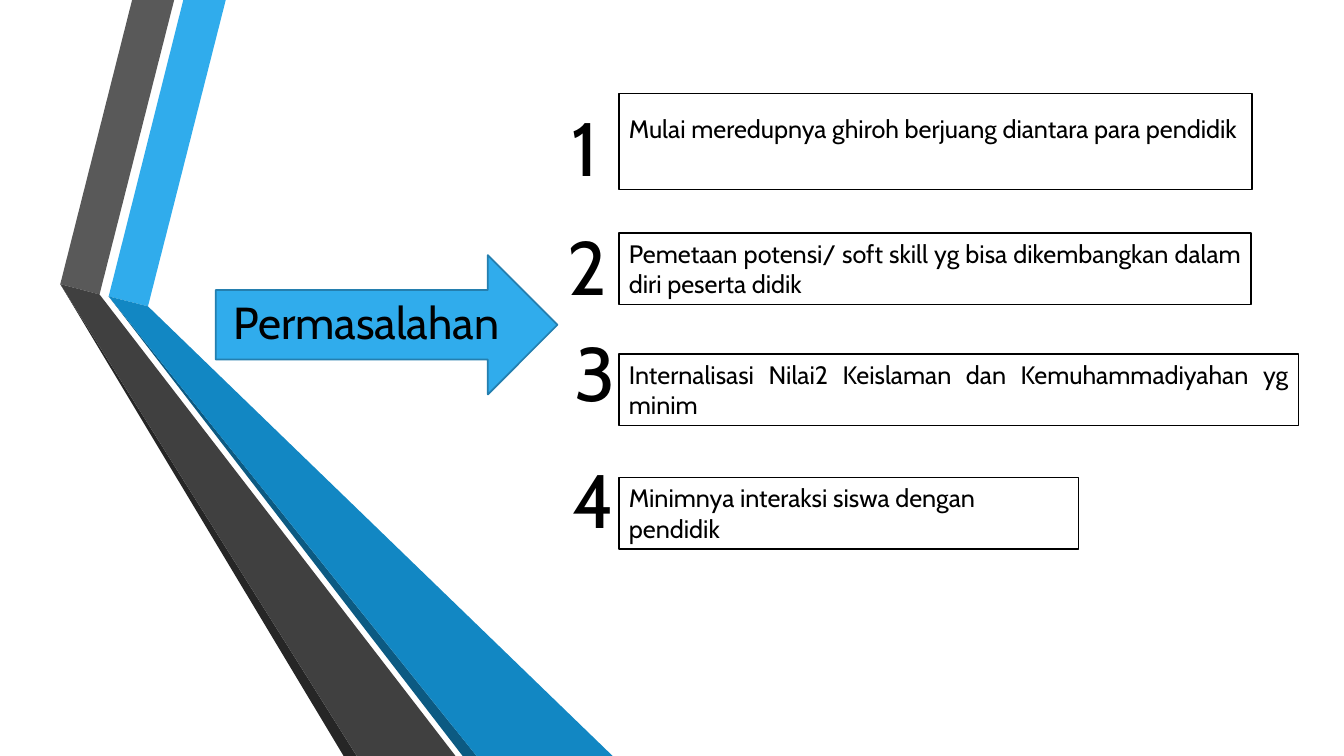
from dataclasses import dataclass

from pptx import Presentation
from pptx.dml.color import RGBColor
from pptx.enum.shapes import MSO_SHAPE
from pptx.enum.text import MSO_ANCHOR, PP_ALIGN
from pptx.util import Cm, Pt


@dataclass
class Theme:
    font: str = "Cabin"
    ink: str = "000000"
    sky: str = "30ACEC"
    rim: str = "247FAF"
    blue: str = "1287C3"
    navy: str = "0C5A82"
    grey: str = "595959"
    coal: str = "404040"
    night: str = "262626"
    body: int = 18
    title: int = 32
    digit: int = 54


class Board:
    def __init__(self, slide, theme):
        self.slide = slide
        self.theme = theme

    def paint(self, shape, fill=None, line=None, width=1):
        shape.shadow.inherit = False
        if fill:
            shape.fill.solid()
            shape.fill.fore_color.rgb = RGBColor.from_string(fill)
        else:
            shape.fill.background()
        if line:
            shape.line.color.rgb = RGBColor.from_string(line)
            shape.line.width = Pt(width)
        else:
            shape.line.fill.background()

    def letter(self, shape, text, size, align, wrap=True):
        frame = shape.text_frame
        frame.word_wrap = wrap
        frame.vertical_anchor = MSO_ANCHOR.TOP
        para = frame.paragraphs[0]
        para.text = text
        para.alignment = align
        para.font.name = self.theme.font
        para.font.size = Pt(size)
        para.font.color.rgb = RGBColor.from_string(self.theme.ink)
        return para

    def band(self, points, fill):
        start, *rest = [(Cm(x), Cm(y)) for x, y in points]
        pen = self.slide.shapes.build_freeform(*start)
        pen.add_line_segments(rest)
        self.paint(pen.convert_to_shape(), fill)

    def shape(self, kind, place, fill=None, line=None, width=1):
        item = self.slide.shapes.add_shape(kind, *map(Cm, place))
        self.paint(item, fill, line, width)
        return item

    def box(self, place, text, align):
        item = self.shape(MSO_SHAPE.RECTANGLE, place, line=self.theme.ink)
        return self.letter(item, text, self.theme.body, align)

    def label(self, place, text, size, wrap=True):
        item = self.slide.shapes.add_textbox(*map(Cm, place))
        self.letter(item, text, size, PP_ALIGN.CENTER, wrap)


def main():
    deck = Presentation()
    deck.slide_width, deck.slide_height = Cm(33.87), Cm(19.05)
    theme = Theme()
    board = Board(deck.slides.add_slide(deck.slide_layouts[6]), theme)

    # Folded ribbons: corners at the fold, ends at the slide edges
    left, mid = (1.52, 7.16), (2.51, 7.42)
    near, far = (2.74, 7.47), (3.73, 7.72)
    foot = 19.05
    bands = [
        ([near, far, (5.69, 0), (4.62, 0)], theme.sky),
        ([mid, (4.39, 0), (3.33, 0), left], theme.grey),
        ([left, (8.66, foot), (8.99, foot)], theme.night),
        ([near, (11.66, foot), (12.01, foot)], theme.navy),
        ([near, (12.01, foot), (15.44, foot), far], theme.blue),
        ([left, (8.99, foot), (11.48, foot), mid], theme.coal),
    ]
    for points, fill in bands:
        board.band(points, fill)

    # Problem boxes: top, width, height, alignment, text, digit place
    full = PP_ALIGN.JUSTIFY
    items = [
        (2.36, 15.95, 2.41, full,
         "Mulai meredupnya ghiroh berjuang diantara para pendidik",
         (14.05, 2.41, 1.37)),
        (5.87, 15.93, 1.8, full,
         "Pemetaan potensi/ soft skill yg bisa dikembangkan dalam diri peserta didik",
         (14.05, 5.41, 1.5)),
        (8.92, 17.12, 1.8, full,
         "Internalisasi Nilai2 Keislaman dan Kemuhammadiyahan yg minim",
         (14.22, 8.1, 1.4)),
        (12.04, 11.58, 1.8, PP_ALIGN.LEFT,
         "Minimnya interaksi siswa dengan pendidik",
         (14.17, 11.28, 1.5)),
    ]
    paras = [board.box((15.6, top, wide, high), text, align)
             for top, wide, high, align, text, _ in items]
    paras[0].line_spacing = 1.5
    for para in paras[:3]:
        para.space_after = Pt(8)

    # Arrow with its title
    board.shape(MSO_SHAPE.RIGHT_ARROW, (5.44, 6.43, 8.61, 3.51),
                theme.sky, theme.rim, 1.25)
    board.label((5.44, 7.29, 7.59, 1.63), "Permasalahan", theme.title)

    # Digits
    for num, (*_, (x, y, wide)) in enumerate(items, 1):
        board.label((x, y, wide, 2.57), str(num), theme.digit, wrap=False)

    deck.save("out.pptx")


if __name__ == "__main__":
    main()
